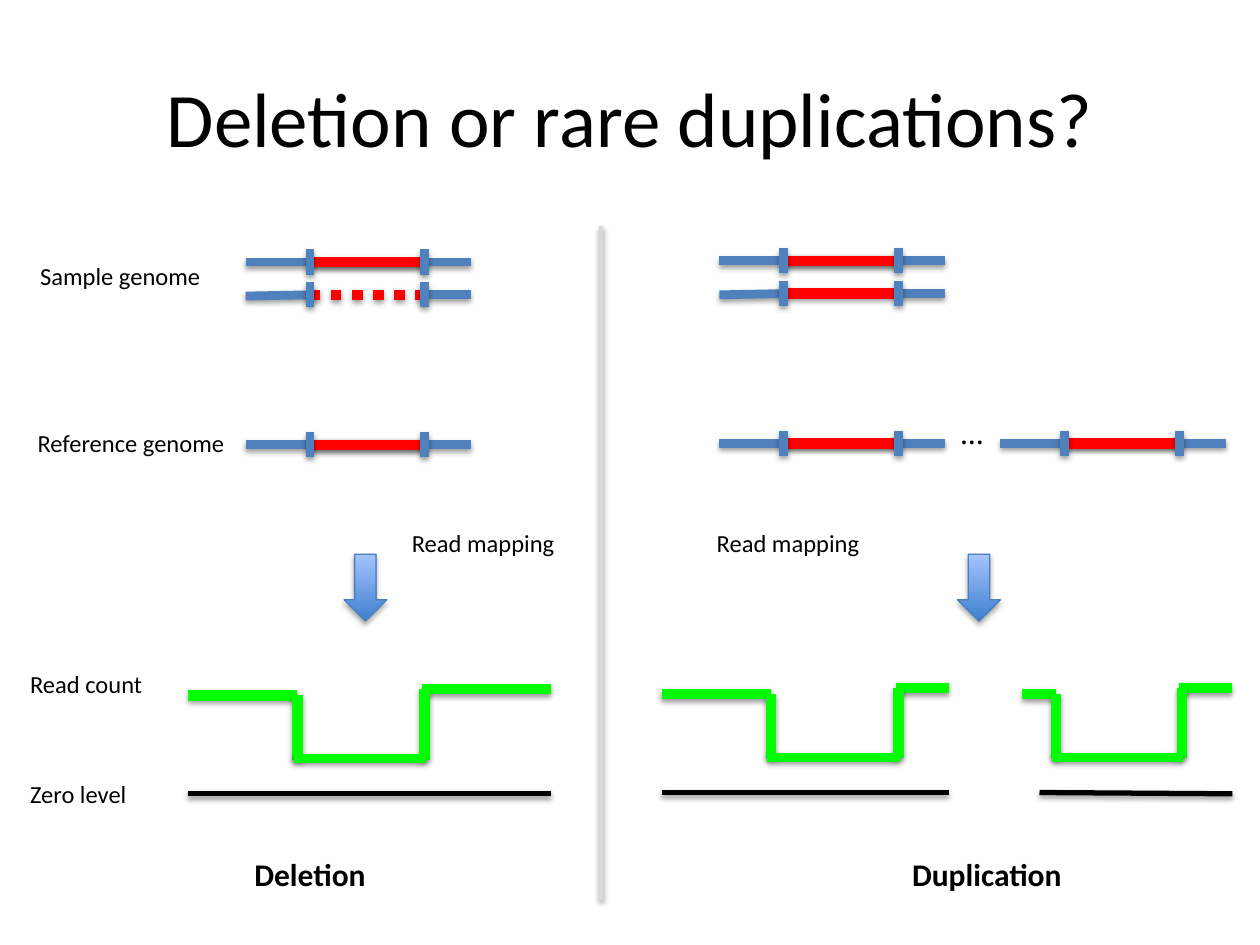
from pptx import Presentation
from pptx.dml.color import RGBColor
from pptx.enum.dml import MSO_LINE
from pptx.enum.shapes import MSO_CONNECTOR, MSO_SHAPE
from pptx.enum.text import MSO_ANCHOR, MSO_AUTO_SIZE, PP_ALIGN
from pptx.oxml import parse_xml
from pptx.oxml.ns import nsdecls
from pptx.util import Inches, Pt

BLACK = RGBColor(0x00, 0x00, 0x00)
BLUE = RGBColor(0x4F, 0x81, 0xBD)
RED = RGBColor(0xFF, 0x00, 0x00)
GREEN = RGBColor(0x00, 0xFF, 0x00)
GREY = RGBColor(0xD9, 0xD9, 0xD9)
ARROW_DARK = RGBColor(0x3F, 0x80, 0xCE)
ARROW_LIGHT = RGBColor(0xA4, 0xC4, 0xFF)
ARROW_EDGE = RGBColor(0x4B, 0x7E, 0xBC)
FONT = "Calibri"


def add_shadow(shape, distance, alpha):
    shape._element.spPr.append(parse_xml(
        f'<a:effectLst {nsdecls("a")}>'
        f'<a:outerShdw blurRad="{Pt(3.1)}" dist="{Pt(distance)}" dir="5400000" rotWithShape="0">'
        f'<a:srgbClr val="000000"><a:alpha val="{alpha * 1000}"/></a:srgbClr>'
        '</a:outerShdw></a:effectLst>'))


def add_line(shapes, x1, y1, x2, y2, color, width, dash=None):
    line = shapes.add_connector(MSO_CONNECTOR.STRAIGHT, Inches(x1), Inches(y1),
                                Inches(x2), Inches(y2))
    line.line.color.rgb = color
    line.line.width = Pt(width)
    if dash:
        line.line.dash_style = dash
    add_shadow(line, 1.6, 38)


def format_text(tf, text, size, bold=None):
    tf.text = text
    font = tf.paragraphs[0].runs[0].font
    font.name, font.size, font.bold = FONT, Pt(size), bold
    font.color.rgb = BLACK


def add_label(s, text, left, top, width, height=0.34, size=14, bold=None):
    tf = s.shapes.add_textbox(Inches(left), Inches(top), Inches(width), Inches(height)).text_frame
    tf.word_wrap = False
    tf.auto_size = MSO_AUTO_SIZE.SHAPE_TO_FIT_TEXT
    format_text(tf, text, size, bold)


def add_title(s, text):
    title = s.shapes.title
    title.left, title.top, title.width, title.height = map(Inches, (0.5, 0.3, 9, 1.25))
    tf = title.text_frame
    tf.vertical_anchor = MSO_ANCHOR.MIDDLE
    format_text(tf, text, 44)
    tf.paragraphs[0].alignment = PP_ALIGN.CENTER


def add_genome(shapes, left, y, second_allele=False, dash=None):
    """Blue flanks around a red region, with a tick at each breakpoint."""
    start, end, right = left + 0.51, left + 1.42, left + 1.79
    if second_allele:
        add_line(shapes, left, y + 0.01, start, y, BLUE, 5)
        add_line(shapes, end, y, right, y, BLUE, 5)
    else:
        add_line(shapes, left, y, right, y, BLUE, 5)
    add_line(shapes, start, y, end, y, RED, 6, dash)
    for x in (start, end):
        add_line(shapes, x, y - 0.1, x, y + 0.1, BLUE, 5)


def add_read_count(s, left, drop, rise, right, top):
    """Green read depth that falls between two breakpoints."""
    high, floor = top - 0.05, top + 0.5
    add_line(s.shapes, left, top, drop, top, GREEN, 6)
    add_line(s.shapes, drop, top, drop, floor + 0.01, GREEN, 6)
    add_line(s.shapes, rise - 0.02, high, right, high, GREEN, 6)
    add_line(s.shapes, rise, floor + 0.01, rise, high, GREEN, 6)
    add_line(s.shapes, drop - 0.03, floor, rise + 0.01, floor, GREEN, 5)


def add_mapping_arrow(s, left, top):
    arrow = s.shapes.add_shape(MSO_SHAPE.DOWN_ARROW, Inches(left), Inches(top),
                               Inches(0.34), Inches(0.53))
    arrow.fill.gradient()
    arrow.fill.gradient_angle = 90
    for stop, color in zip(arrow.fill.gradient_stops, (ARROW_DARK, ARROW_LIGHT)):
        stop.color.rgb = color
    arrow.line.color.rgb = ARROW_EDGE
    arrow.line.width = Pt(0.75)
    add_shadow(arrow, 1.8, 35)


def add_panel(s, left, top, width, arrow_left, dash=None):
    """Sample alleles, reference, mapping arrow, read count and zero level."""
    genome_left = left + 0.46
    add_genome(s.shapes.add_group_shape().shapes, genome_left, top)
    add_genome(s.shapes, genome_left, top + 0.26, True, dash)
    add_genome(s.shapes, genome_left, top + 1.45)
    add_mapping_arrow(s, arrow_left, 4.4)
    add_line(s.shapes, left, top + 4.22, left + width, top + 4.22, BLACK, 3)
    add_read_count(s, left, left + 0.87, left + 1.88, left + width, top + 3.44)


def add_second_copy(s):
    """Distant copy of the duplicated region in the reference."""
    add_label(s, "…", 7.53, 3.23, 0.38, 0.4, 18)
    add_genome(s.shapes, 7.94, 3.52)
    add_line(s.shapes, 8.25, 6.29, 9.78, 6.3, BLACK, 3)
    add_read_count(s, 8.11, 8.38, 9.38, 9.78, 5.51)


def add_labels(s):
    for text, left, top, width in (
            ("Sample genome", 0.22, 2.02, 1.48),
            ("Reference genome", 0.2, 3.35, 1.7),
            ("Read count", 0.14, 5.26, 1.21),
            ("Zero level", 0.14, 6.13, 1.06),
            ("Read mapping", 3.17, 4.14, 1.34),
            ("Read mapping", 5.59, 4.14, 1.34)):
        add_label(s, text, left, top, width)
    for text, left, width in (("Deletion", 1.92, 1.1), ("Duplication", 7.14, 1.4)):
        add_label(s, text, left, 6.74, width, 0.4, 18, True)


def main():
    prs = Presentation()
    prs.slide_width, prs.slide_height = Inches(10), Inches(7.5)
    s = prs.slides.add_slide(prs.slide_layouts[5])
    add_title(s, "Deletion or rare duplications?")
    add_labels(s)
    # Left and right panels with the divider between them
    add_panel(s, 1.49, 2.08, 2.88, 2.73, MSO_LINE.ROUND_DOT)
    add_panel(s, 5.25, 2.07, 2.28, 7.6)
    add_second_copy(s)
    add_line(s.shapes, 4.77, 1.79, 4.77, 7.14, GREY, 2)
    prs.save("out.pptx")


if __name__ == "__main__":
    main()
